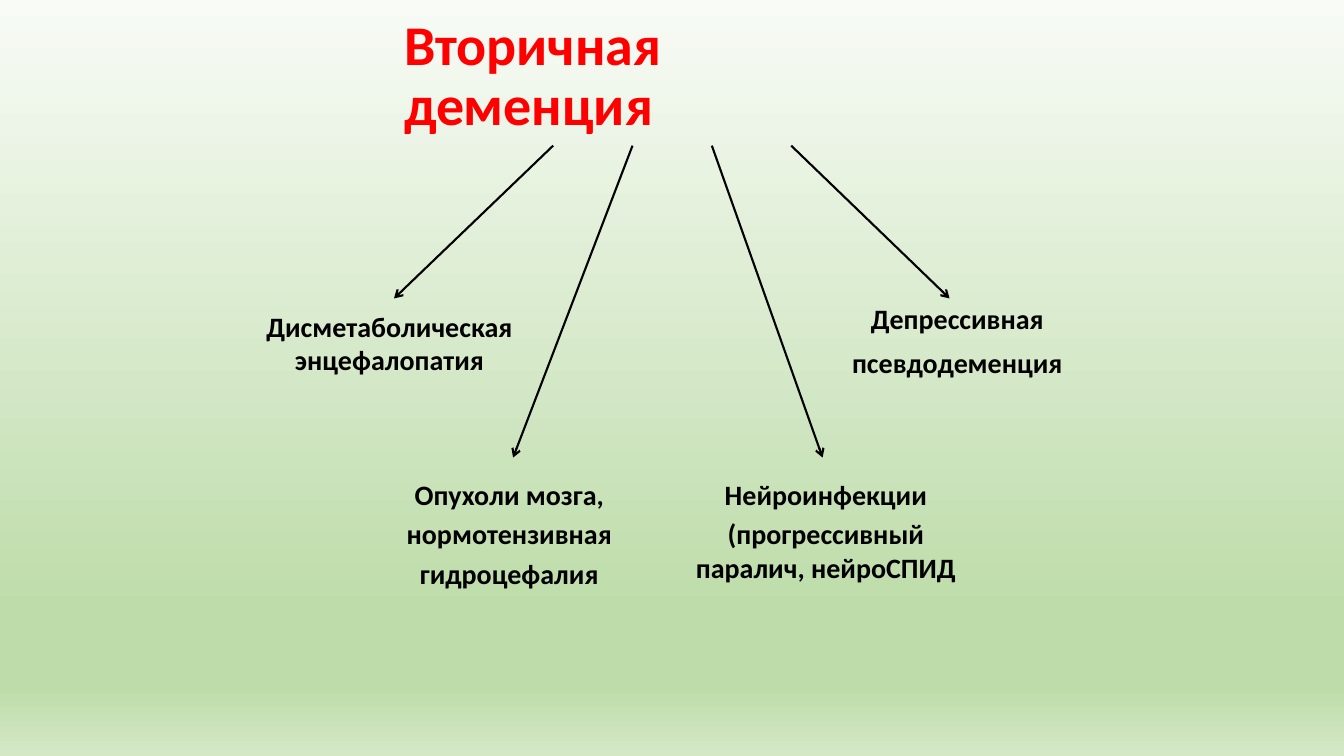
from copy import deepcopy
from dataclasses import dataclass

from lxml.etree import SubElement
from pptx import Presentation
from pptx.dml.color import RGBColor
from pptx.enum.shapes import MSO_CONNECTOR
from pptx.enum.text import MSO_ANCHOR, MSO_AUTO_SIZE, PP_ALIGN
from pptx.oxml.ns import qn
from pptx.util import Cm, Pt


@dataclass(frozen=True)
class Theme:
    font: str = "Calibri"
    title_size: int = 40
    label_size: int = 20
    title_color: str = "FF0000"
    ink: str = "000000"
    line_width: float = 1.5
    background: tuple = ((0, "F8FBF6"), (0.81, "BEDCAA"), (0.91, "BEDCAA"), (1, "D4E8C6"))


THEME = Theme()


def paint_background(page):
    fill = page.background.fill
    fill.gradient()
    fill.gradient_angle = 270
    stop_list = next(page.element.iter(qn("a:gsLst")))
    while len(stop_list) < len(THEME.background):
        stop_list.append(deepcopy(stop_list[0]))
    for stop, (position, color) in zip(fill.gradient_stops, THEME.background):
        stop.position = position
        stop.color.rgb = RGBColor.from_string(color)


def place(shape, left, top, width, height):
    shape.left, shape.top = Cm(left), Cm(top)
    shape.width, shape.height = Cm(width), Cm(height)


def write(shape, lines, size, color, align=PP_ALIGN.CENTER, before=0, spacing=1.0):
    """Fill a shape with bold paragraphs, one for each line."""
    frame = shape.text_frame
    frame.word_wrap = True
    frame.auto_size = MSO_AUTO_SIZE.NONE
    frame.text = "\n".join(lines)
    for para in frame.paragraphs:
        para.alignment = align
        para.space_before = Pt(before)
        para.line_spacing = spacing
        para.font.name = THEME.font
        para.font.size = Pt(size)
        para.font.bold = True
        para.font.color.rgb = RGBColor.from_string(color)


def remove_bullets(shape):
    for para in shape.text_frame.paragraphs:
        properties = para._p.get_or_add_pPr()
        properties.set("marL", "0")
        properties.set("indent", "0")
        bullet = SubElement(properties, qn("a:buNone"))
        properties.find(qn("a:defRPr")).addprevious(bullet)


def add_title(page, text):
    title = page.shapes.title
    place(title, 9.93, 0.36, 13.39, 3.18)
    write(title, [text], THEME.title_size, THEME.title_color, PP_ALIGN.LEFT, spacing=0.9)
    title.text_frame.vertical_anchor = MSO_ANCHOR.MIDDLE


def add_body(page, lines):
    body = page.placeholders[1]
    place(body, 21.13, 7.57, 5.99, 2.74)
    write(body, lines, THEME.label_size, THEME.ink, before=10, spacing=0.9)
    remove_bullets(body)


def add_label(page, left, top, height, lines):
    box = page.shapes.add_textbox(Cm(left), Cm(top), Cm(7.39), Cm(height))
    write(box, lines, THEME.label_size, THEME.ink, before=4)


def add_arrow(page, start, end):
    points = [Cm(value) for value in (*start, *end)]
    arrow = page.shapes.add_connector(MSO_CONNECTOR.STRAIGHT, *points)
    arrow.line.color.rgb = RGBColor.from_string(THEME.ink)
    arrow.line.width = Pt(THEME.line_width)
    SubElement(arrow.line._get_or_add_ln(), qn("a:tailEnd"), type="arrow")
    SubElement(arrow._element.spPr, qn("a:effectLst"))


def main():
    deck = Presentation()
    deck.slide_width, deck.slide_height = Cm(33.87), Cm(19.05)
    page = deck.slides.add_slide(deck.slide_layouts[1])
    paint_background(page)

    add_title(page, "Вторичная деменция")
    add_body(page, ["Депрессивная", "псевдодеменция"])

    arrow_ends = [(9.93, 7.52), (12.93, 11.53), (20.73, 11.53), (23.93, 7.52)]
    for index, end in enumerate(arrow_ends):
        add_arrow(page, (13.94 + 2 * index, 3.67), end)

    add_label(page, 6.12, 7.67, 1.85, ["Дисметаболическая энцефалопатия"])
    add_label(page, 9.14, 11.91, 3.99, ["Опухоли мозга,", "нормотензивная", "гидроцефалия"])
    add_label(page, 17.12, 11.91, 3.99, ["Нейроинфекции", "(прогрессивный паралич, нейроСПИД"])

    deck.save("out.pptx")


if __name__ == "__main__":
    main()
